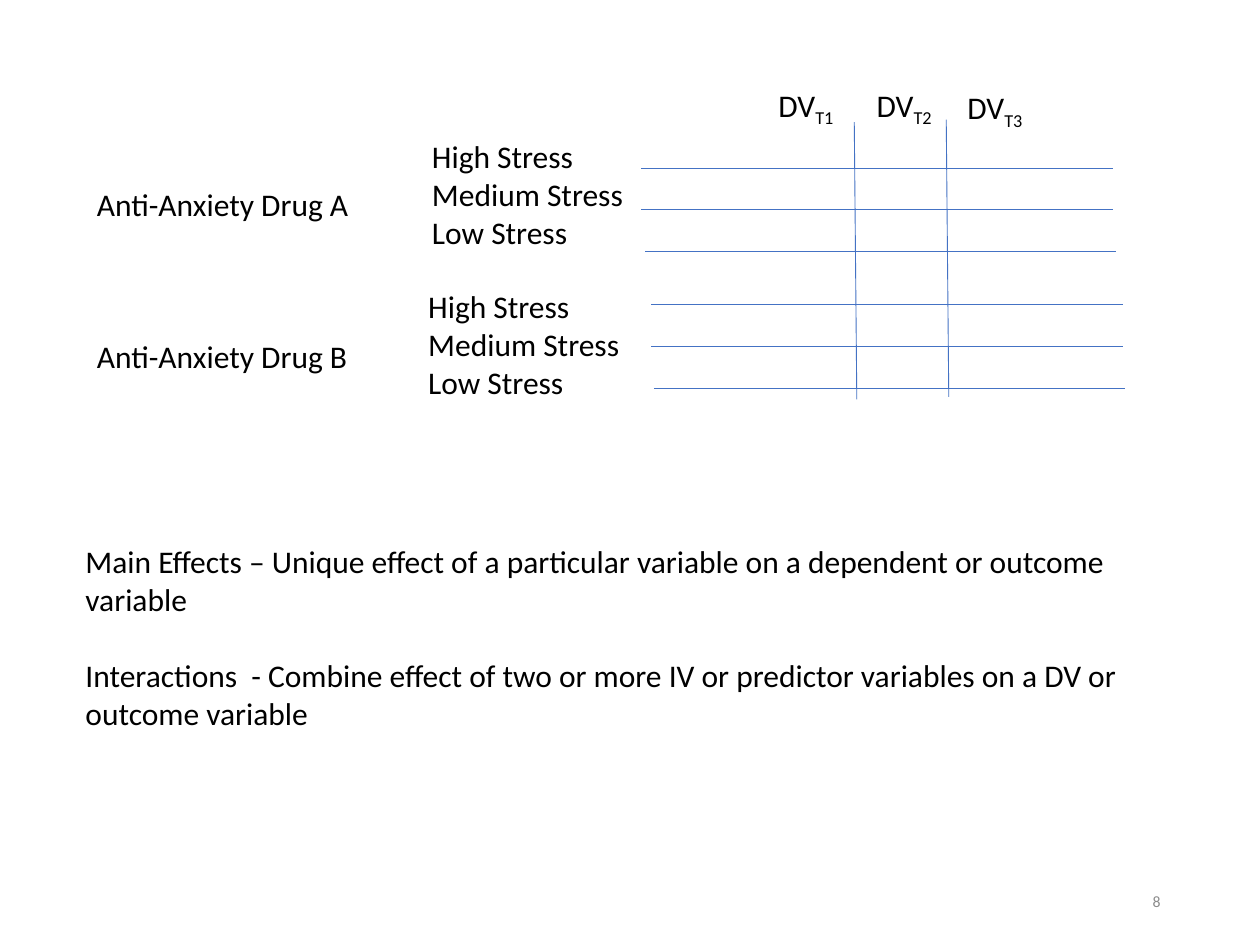
from dataclasses import dataclass

import pptx
import pptx.dml.color
import pptx.enum.shapes
import pptx.enum.text
import pptx.oxml.ns
import pptx.util
from lxml import etree

BLACK = pptx.dml.color.RGBColor(0x00, 0x00, 0x00)
GREY = pptx.dml.color.RGBColor(0x8C, 0x8C, 0x8C)
BLUE = pptx.dml.color.RGBColor(0x44, 0x72, 0xC4)
FONT = "Calibri"
SLIDE_WIDTH = pptx.util.Inches(10)
SLIDE_HEIGHT = pptx.util.Inches(7.5)

STRESS_LEVELS = ("High Stress", "Medium Stress", "Low Stress")
ROW_LENGTH = 37.4
ROW_STEP = 4.44
COLUMN_LEAN = 0.2
COLUMN_HEIGHT = 29.33


@dataclass(frozen=True)
class Label:
    left: float
    top: float
    width: float
    height: float
    lines: tuple[str, ...]
    subscript: str = ""
    gap: float = 0
    wrap: bool = False


@dataclass(frozen=True)
class DrugGroup:
    levels_left: float
    levels_top: float
    rows_top: float
    row_lefts: tuple[float, ...]


LABELS = (
    Label(6.7, 18.93, 22.2, 21.6,
          ("Anti-Anxiety Drug A", "Anti-Anxiety Drug B"), gap=65),
    Label(60.8, 8.4, 6.7, 5.33, ("DV",), subscript="T1"),
    Label(68.6, 8.4, 6.7, 5.33, ("DV",), subscript="T2"),
    Label(75.8, 8.67, 7.5, 5.33, ("DV",), subscript="T3", wrap=True),
    Label(5.8, 56.67, 90.5, 21.6, (
        "Main Effects – Unique effect of a particular variable on a dependent or outcome variable",
        "Interactions  - Combine effect of two or more IV or predictor variables on a DV or outcome variable",
    ), gap=22, wrap=True),
)
DRUG_GROUPS = (
    DrugGroup(33.3, 13.87, 17.78, (50.9, 50.9, 51.2)),
    DrugGroup(33.0, 29.73, 32.22, (51.7, 51.7, 51.9)),
)
COLUMN_STARTS = ((67.8, 12.93), (75.1, 12.67))


def across(percent: float) -> int:
    return int(SLIDE_WIDTH * percent / 100)


def down(percent: float) -> int:
    return int(SLIDE_HEIGHT * percent / 100)


def style_run(run, size: float, color: pptx.dml.color.RGBColor) -> None:
    run.font.name = FONT
    run.font.size = pptx.util.Pt(size)
    run.font.color.rgb = color


def draw_label(slide, label: Label):
    box = slide.shapes.add_textbox(across(label.left), down(label.top),
                                   across(label.width), down(label.height))
    frame = box.text_frame
    frame.text = "\n".join(label.lines)
    frame.word_wrap = label.wrap
    frame.auto_size = pptx.enum.text.MSO_AUTO_SIZE.SHAPE_TO_FIT_TEXT
    for paragraph in frame.paragraphs[1:]:
        paragraph.space_before = pptx.util.Pt(label.gap)
    if label.subscript:
        subscript = frame.paragraphs[0].add_run()
        subscript.text = label.subscript
        subscript.font._element.set("baseline", "-25000")
    for paragraph in frame.paragraphs:
        for run in paragraph.runs:
            style_run(run, 18, BLACK)


def draw_line(slide, left: float, top: float, width: float, height: float) -> None:
    line = slide.shapes.add_connector(
        pptx.enum.shapes.MSO_CONNECTOR.STRAIGHT,
        across(left), down(top), across(left + width), down(top + height))
    line.line.color.rgb = BLUE
    line.line.width = pptx.util.Pt(0.5)
    etree.SubElement(line._element.spPr, pptx.oxml.ns.qn("a:effectLst"))


def draw_drug_group(slide, group: DrugGroup) -> None:
    draw_label(slide, Label(group.levels_left, group.levels_top, 17.9, 13.47,
                            STRESS_LEVELS))
    for row, left in enumerate(group.row_lefts):
        draw_line(slide, left, group.rows_top + row * ROW_STEP, ROW_LENGTH, 0)


def draw_page_number(slide, number: str) -> None:
    box = slide.shapes.add_textbox(across(70.6), down(92.67), across(22.5), down(5.33))
    frame = box.text_frame
    frame.text = number
    frame.word_wrap = True
    frame.vertical_anchor = pptx.enum.text.MSO_ANCHOR.MIDDLE
    paragraph = frame.paragraphs[0]
    paragraph.alignment = pptx.enum.text.PP_ALIGN.RIGHT
    style_run(paragraph.runs[0], 9, GREY)


def main() -> None:
    presentation = pptx.Presentation()
    presentation.slide_width = SLIDE_WIDTH
    presentation.slide_height = SLIDE_HEIGHT
    slide = presentation.slides.add_slide(presentation.slide_layouts[6])

    draw_page_number(slide, "8")
    for label in LABELS:
        draw_label(slide, label)
    for group in DRUG_GROUPS:
        draw_drug_group(slide, group)
    for left, top in COLUMN_STARTS:
        draw_line(slide, left, top, COLUMN_LEAN, COLUMN_HEIGHT)

    presentation.save("out.pptx")


if __name__ == "__main__":
    main()
